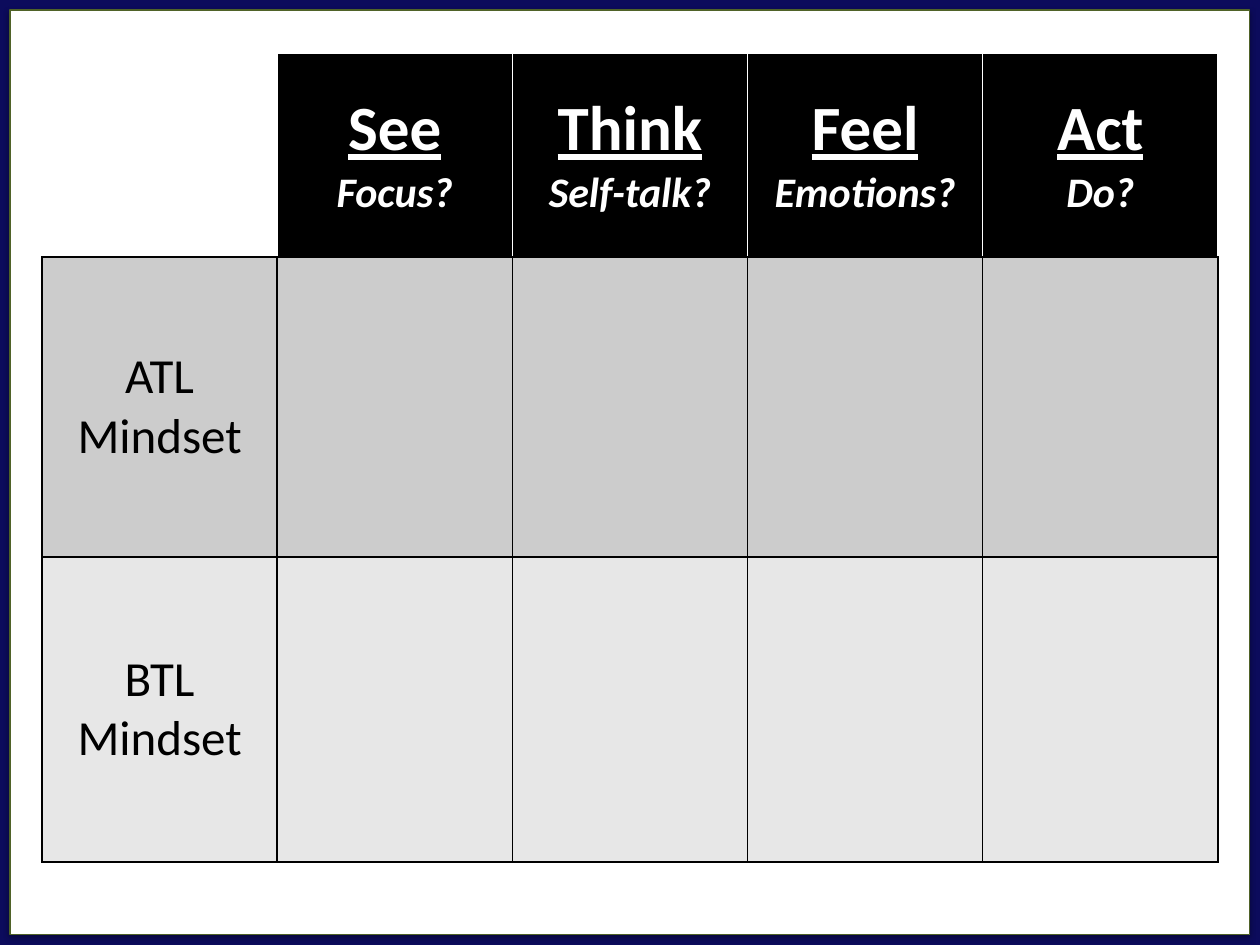
"""Build a mindset grid: two mindsets against see, think, feel and act."""
from typing import NamedTuple, Optional

from lxml import etree
from pptx import Presentation
from pptx import util as u
from pptx.dml.color import RGBColor
from pptx.enum import shapes, text
from pptx.oxml.ns import qn

COLORS = {
    "navy": "0C0B5C",
    "white": "FFFFFF",
    "black": "000000",
    "olive": "4F6228",
    "atl": "CCCCCC",
    "btl": "E7E7E7",
}
FONT = "Calibri"
WIDTH, HEIGHT = u.Inches(10), u.Inches(7.5)
COLUMNS = 5
ROW_HEIGHTS = (1.62, 2.38, 2.42)


class Heading(NamedTuple):
    title: str
    prompt: str


class Mindset(NamedTuple):
    name: str
    fill: str


HEADINGS = (
    Heading("See", "Focus?"),
    Heading("Think", "Self-talk?"),
    Heading("Feel", "Emotions?"),
    Heading("Act", "Do?"),
)
MINDSETS = (Mindset("ATL", "atl"), Mindset("BTL", "btl"))


def rgb(name: str) -> RGBColor:
    return RGBColor.from_string(COLORS[name])


def write(p, words: str, *, size: float, color: str, bold: bool = False,
          italic: bool = False, underline: bool = False) -> None:
    p.alignment = text.PP_ALIGN.CENTER
    r = p.add_run()
    r.text = words
    f = r.font
    f.name, f.size, f.bold = FONT, u.Pt(size), bold
    f.italic, f.underline = italic, underline
    f.color.rgb = rgb(color)


def add_color(parent, name: str):
    return etree.SubElement(parent, qn("a:srgbClr"), val=COLORS[name])


def style_cell(cell, fill: Optional[str], sides: str, bottom: str = "black") -> None:
    pr = cell._tc.get_or_add_tcPr()
    for tag, color in (("lnL", sides), ("lnR", sides), ("lnT", sides), ("lnB", bottom)):
        ln = etree.SubElement(pr, qn(f"a:{tag}"), w=str(u.Pt(1)))
        add_color(etree.SubElement(ln, qn("a:solidFill")), color)
    if fill:
        cell.fill.solid()
        cell.fill.fore_color.rgb = rgb(fill)
    else:
        cell.fill.background()
    cell.vertical_anchor = text.MSO_ANCHOR.MIDDLE


def add_panel(s) -> None:
    margin = u.Inches(0.08)
    sp = s.shapes.add_shape(shapes.MSO_SHAPE.RECTANGLE, margin, margin,
                            WIDTH - 2 * margin, HEIGHT - 2 * margin)
    sp.fill.solid()
    sp.fill.fore_color.rgb = rgb("white")
    sp.line.color.rgb = rgb("olive")
    sp.line.width = u.Pt(0.75)
    sp.shadow.inherit = False
    effects = sp._element.spPr.find(qn("a:effectLst"))
    shadow = etree.SubElement(effects, qn("a:outerShdw"), blurRad=str(u.Pt(3.1)),
                              dist=str(u.Pt(1.6)), dir="5400000", rotWithShape="0")
    etree.SubElement(add_color(shadow, "black"), qn("a:alpha"), val="38000")


def add_grid(s) -> None:
    left = WIDTH // 30
    frame = s.shapes.add_table(len(ROW_HEIGHTS), COLUMNS, left, u.Inches(0.42),
                               WIDTH - 2 * left, u.Inches(sum(ROW_HEIGHTS)))
    table = frame.table
    table.first_row = table.horz_banding = False
    for row, height in zip(table.rows, ROW_HEIGHTS):
        row.height = u.Inches(height)

    style_cell(table.cell(0, 0), None, "white")
    for col, heading in enumerate(HEADINGS, 1):
        cell = table.cell(0, col)
        style_cell(cell, "black", "white")
        tf = cell.text_frame
        write(tf.paragraphs[0], heading.title, size=36, color="white",
              bold=True, underline=True)
        write(tf.add_paragraph(), heading.prompt, size=24, color="white",
              bold=True, italic=True)

    for row, mindset in enumerate(MINDSETS, 1):
        for col in range(COLUMNS):
            style_cell(table.cell(row, col), mindset.fill, "black")
        tf = table.cell(row, 0).text_frame
        write(tf.paragraphs[0], mindset.name, size=28, color="black")
        write(tf.add_paragraph(), "Mindset", size=28, color="black")


def main() -> None:
    prs = Presentation()
    prs.slide_width, prs.slide_height = WIDTH, HEIGHT
    s = prs.slides.add_slide(prs.slide_layouts[6])
    s.background.fill.solid()
    s.background.fill.fore_color.rgb = rgb("navy")
    add_panel(s)
    add_grid(s)
    prs.save("out.pptx")


if __name__ == "__main__":
    main()
